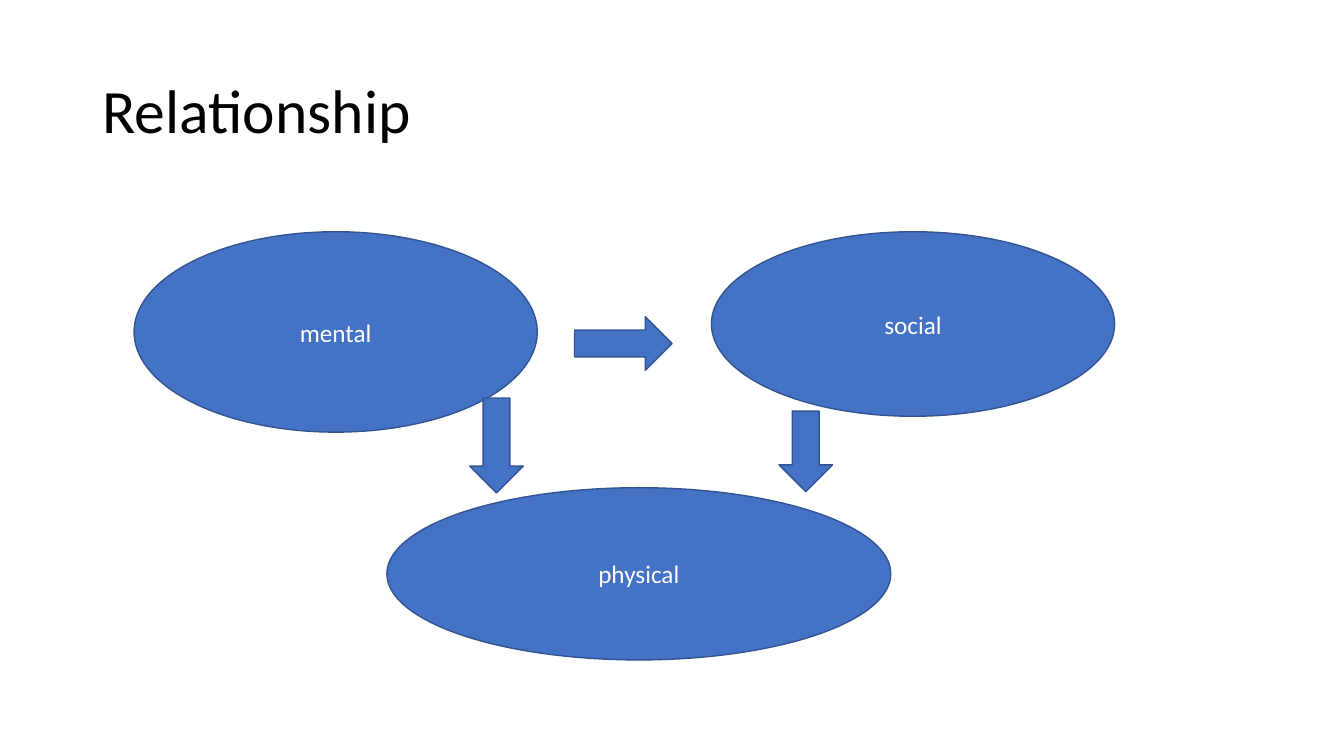
from pptx import Presentation
from pptx.util import Cm, Pt
from pptx.dml.color import RGBColor
from pptx.enum.shapes import MSO_SHAPE as Preset
from pptx.enum.text import MSO_ANCHOR as Anchor, PP_ALIGN as Align

HEADING = "Relationship"
ASPECTS = [
    ("mental", 3.38, 5.84, 10.16, 5.05),
    ("social", 17.93, 5.84, 10.16, 4.65),
    ("physical", 9.75, 12.29, 12.7, 4.34),
]
ARROWS = [
    (Preset.RIGHT_ARROW, 14.48, 7.98, 2.46, 1.35),
    (Preset.DOWN_ARROW, 19.63, 10.36, 1.35, 2.03),
    (Preset.DOWN_ARROW, 11.84, 10.03, 1.35, 2.39),
]
COLORS = {"title": "000000", "fill": "4472C4", "line": "325491", "label": "FFFFFF"}
FONT = "Calibri"


def color(role):
    return RGBColor.from_string(COLORS[role])


def write(frame, text, size, role, align):
    frame.text = text
    frame.word_wrap = True
    frame.vertical_anchor = Anchor.MIDDLE
    paragraph = frame.paragraphs[0]
    paragraph.alignment = align
    font = paragraph.runs[0].font
    font.name, font.size, font.color.rgb = FONT, Pt(size), color(role)
    return paragraph


def add_figure(slide, preset, *box):
    figure = slide.shapes.add_shape(preset, *map(Cm, box))
    figure.shadow.inherit = False
    figure.fill.solid()
    figure.fill.fore_color.rgb = color("fill")
    figure.line.color.rgb = color("line")
    figure.line.width = Pt(1)
    return figure


def main():
    deck = Presentation()
    deck.slide_width, deck.slide_height = Cm(33.87), Cm(19.05)
    slide = deck.slides.add_slide(deck.slide_layouts[5])

    heading = slide.shapes.title
    heading.left, heading.top = Cm(2.33), Cm(1.01)
    heading.width, heading.height = Cm(29.21), Cm(3.68)
    write(heading.text_frame, HEADING, 44, "title", Align.LEFT).line_spacing = 0.9

    for aspect, *box in ASPECTS:
        oval = add_figure(slide, Preset.FLOWCHART_CONNECTOR, *box)
        write(oval.text_frame, aspect, 18, "label", Align.CENTER)
    for direction, *box in ARROWS:
        add_figure(slide, direction, *box)

    deck.save("out.pptx")


if __name__ == "__main__":
    main()
